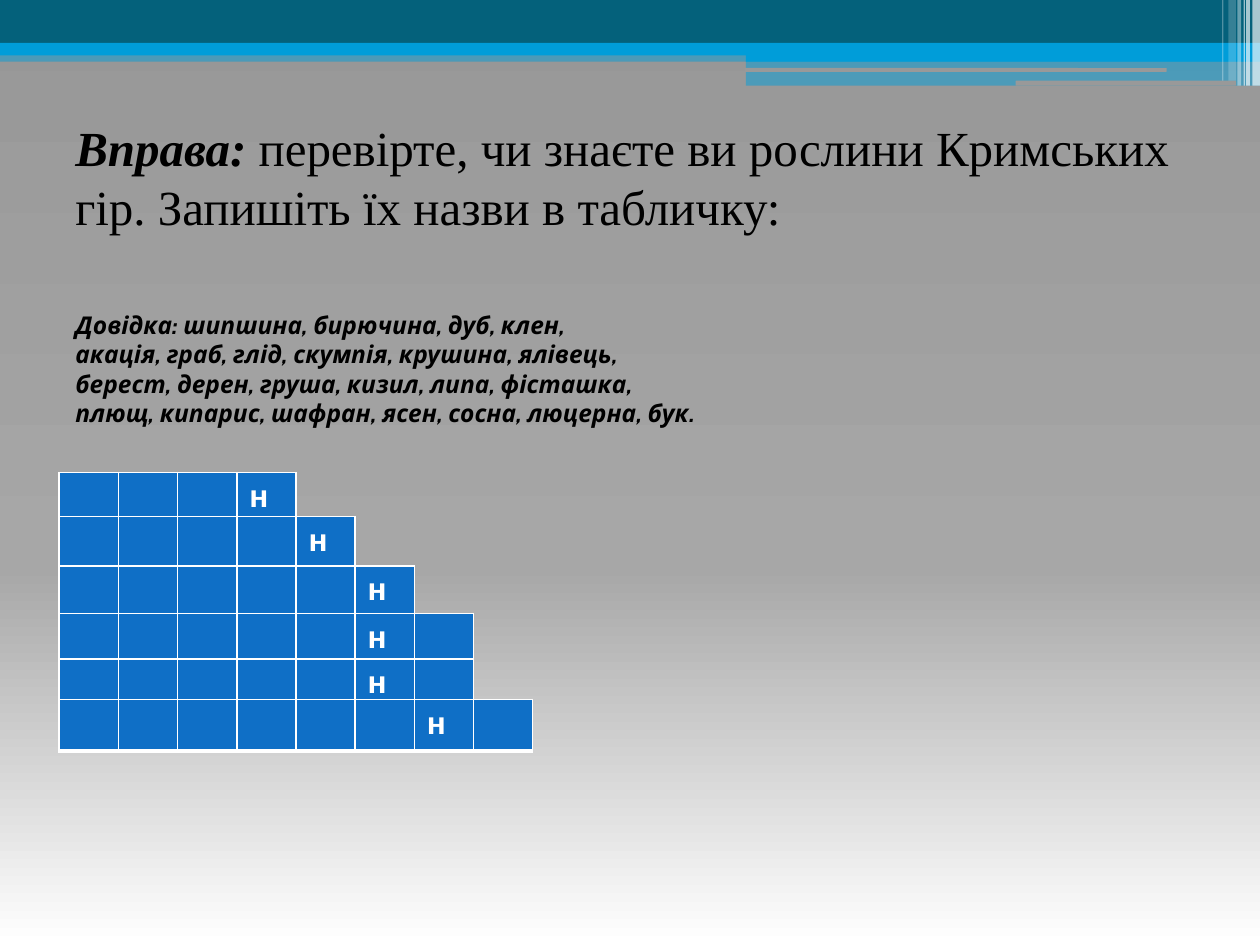
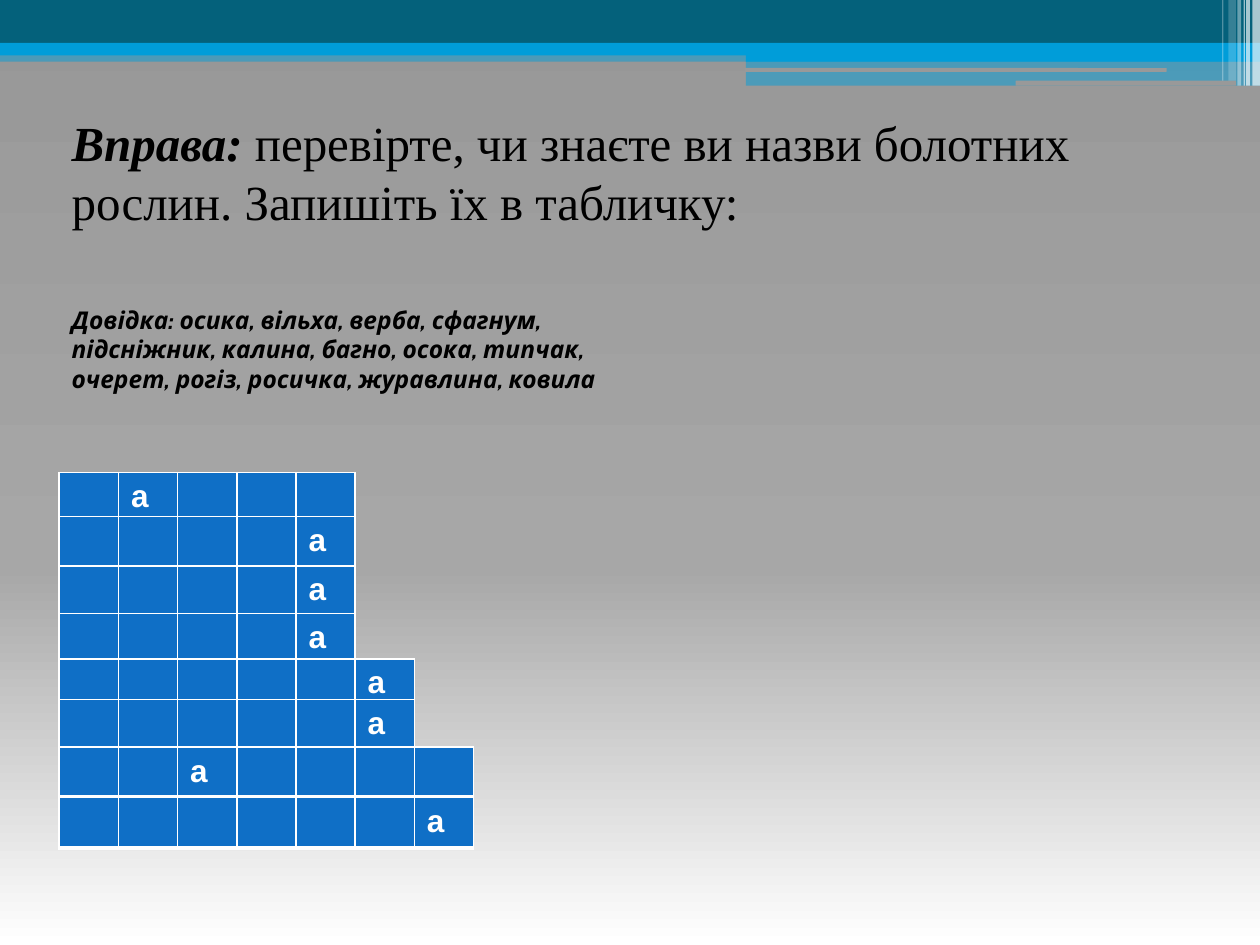
from copy import deepcopy
from dataclasses import dataclass

from lxml import etree
from pptx import Presentation
from pptx.dml.color import RGBColor
from pptx.enum.shapes import MSO_SHAPE
from pptx.oxml.ns import qn
from pptx.util import Inches, Pt

RECTANGLE = MSO_SHAPE.RECTANGLE
ROUNDED = MSO_SHAPE.ROUNDED_RECTANGLE


@dataclass(frozen=True)
class Theme:
    teal: str = "04617B"
    cyan: str = "009DD9"
    white: str = "FFFFFF"
    gray: str = "999999"
    cell: str = "0F6FC6"
    text: str = "000000"
    backdrop: tuple = ((0, "979797"), (0.6, "A7A7A7"), (1, "FFFFFF"))
    task_font: str = "Times New Roman"
    hint_font: str = "Cabin"
    letter_font: str = "Arial"
    task_size: int = 28
    hint_size: int = 14
    letter_size: int = 18


THEME = Theme()

# preset, left, top, width, height, colour, opacity in percent
BANDS = [
    (RECTANGLE, 0, 0.4, 10, 0.09, THEME.cyan, 50),
    (RECTANGLE, 0, 0, 10, 0.34, THEME.teal, 100),
    (RECTANGLE, 0, 0.34, 10, 0.1, THEME.cyan, 100),
    (RECTANGLE, 5.92, 0.39, 4.08, 0.1, THEME.cyan, 100),
    (RECTANGLE, 5.92, 0.48, 4.08, 0.2, THEME.cyan, 50),
    (ROUNDED, 5.91, 0.54, 3.35, 0.03, THEME.gray, 100),
    (ROUNDED, 8.06, 0.64, 1.75, 0.04, THEME.gray, 100),
    (RECTANGLE, 9.94, 0, 0.06, 0.68, THEME.white, 65),
    (RECTANGLE, 9.89, 0, 0.03, 0.68, THEME.white, 65),
    (RECTANGLE, 9.87, 0, 0.01, 0.68, THEME.white, 60),
    (RECTANGLE, 9.82, 0, 0.03, 0.68, THEME.white, 40),
    (RECTANGLE, 9.75, 0, 0.06, 0.64, THEME.white, 20),
    (RECTANGLE, 9.7, 0, 0.01, 0.64, THEME.white, 30),
]

GRID_LEFT = 0.47
CELL_WIDTH = 0.47
ROW_TOPS = [3.75, 4.1, 4.49, 4.87, 5.23, 5.55, 5.93, 6.33]
ROW_HEIGHTS = [0.41, 0.56, 0.48, 0.4, 0.4, 0.41, 0.4, 0.4]
BORDERS = {"a:lnL": 1, "a:lnR": 1, "a:lnT": 1, "a:lnB": 3}

# Each word is (number of cells, index of the cell with the given letter)
EXERCISES = [
    {
        "left": 0.5,
        "top": 0.88,
        "task": "перевірте, чи знаєте ви рослини Кримських гір. Запишіть їх назви в табличку:",
        "hint": [
            "Довідка: шипшина, бирючина, дуб, клен,",
            "акація, граб, глід, скумпія, крушина, ялівець,",
            "берест, дерен, груша, кизил, липа, фісташка,",
            "плющ, кипарис, шафран, ясен, сосна, люцерна, бук.",
        ],
        "letter": "н",
        "words": [(4, 3), (5, 4), (6, 5), (7, 5), (7, 5), (8, 6)],
    },
    {
        "left": 0.47,
        "top": 0.84,
        "task": "перевірте, чи знаєте ви назви болотних рослин. Запишіть їх в табличку:",
        "hint": [
            "Довідка: осика, вільха, верба, сфагнум,",
            "підсніжник, калина, багно, осока, типчак,",
            "очерет, рогіз, росичка, журавлина, ковила",
        ],
        "letter": "а",
        "words": [(5, 1), (5, 4), (5, 4), (5, 4), (6, 5), (6, 5), (7, 2), (7, 6)],
    },
]


def style_font(font, name, size, color):
    font.name = name
    font.size = Pt(size)
    font.color.rgb = RGBColor.from_string(color)


def style_cell(cell):
    """Give a cell its white borders and blue fill."""
    properties = cell._tc.get_or_add_tcPr()
    for side, points in BORDERS.items():
        line = etree.SubElement(properties, qn(side), w=str(Pt(points)))
        fill = etree.SubElement(line, qn("a:solidFill"))
        etree.SubElement(fill, qn("a:srgbClr"), val=THEME.white)
    cell.fill.solid()
    cell.fill.fore_color.rgb = RGBColor.from_string(THEME.cell)


presentation = Presentation()
presentation.slide_width = Inches(10)
presentation.slide_height = Inches(7.5)

for exercise in EXERCISES:
    slide = presentation.slides.add_slide(presentation.slide_layouts[6])

    # Background gradient, top to bottom
    background = slide.background.fill
    background.gradient()
    background.gradient_angle = 270
    stop_list = slide._element.xpath(".//a:gsLst")[0]
    stop_list.append(deepcopy(stop_list[0]))
    for stop, (position, color) in zip(background.gradient_stops, THEME.backdrop):
        stop.position = position
        stop.color.rgb = RGBColor.from_string(color)

    # Header bands
    for preset, left, top, width, height, color, opacity in BANDS:
        band = slide.shapes.add_shape(
            preset, Inches(left), Inches(top), Inches(width), Inches(height))
        band.shadow.inherit = False
        band.line.fill.background()
        band.fill.solid()
        band.fill.fore_color.rgb = RGBColor.from_string(color)
        if opacity < 100:
            color_element = band._element.spPr.find(".//" + qn("a:srgbClr"))
            etree.SubElement(color_element, qn("a:alpha"), val=str(opacity * 1000))

    # Task and word hints
    text_box = slide.shapes.add_textbox(
        Inches(exercise["left"]), Inches(exercise["top"]), Inches(9), Inches(2.5))
    text_frame = text_box.text_frame
    text_frame.word_wrap = True

    task = text_frame.paragraphs[0]
    task.line_spacing = Pt(33.7)
    style_font(task.font, THEME.task_font, THEME.task_size, THEME.text)
    label = task.add_run()
    label.text = "Вправа: "
    label.font.bold = label.font.italic = True
    task.add_run().text = exercise["task"]

    hint = text_frame.add_paragraph()
    hint.text = "\v".join(exercise["hint"])
    hint.space_before = Pt(43)
    hint.line_spacing = Pt(16.75)
    style_font(hint.font, THEME.hint_font, THEME.hint_size, THEME.text)
    hint.font.bold = hint.font.italic = True

    # One single-row table per word
    for (cell_count, letter_index), top, height in zip(
            exercise["words"], ROW_TOPS, ROW_HEIGHTS):
        table = slide.shapes.add_table(
            1, cell_count, Inches(GRID_LEFT), Inches(top),
            Inches(CELL_WIDTH * cell_count), Inches(height)).table
        table.first_row = table.horz_banding = False
        for column in table.columns:
            column.width = Inches(CELL_WIDTH)
        for cell in table.iter_cells():
            style_cell(cell)
        paragraph = table.cell(0, letter_index).text_frame.paragraphs[0]
        paragraph.text = exercise["letter"]
        style_font(paragraph.font, THEME.letter_font, THEME.letter_size, THEME.white)
        paragraph.font.bold = True

presentation.save("out.pptx")
